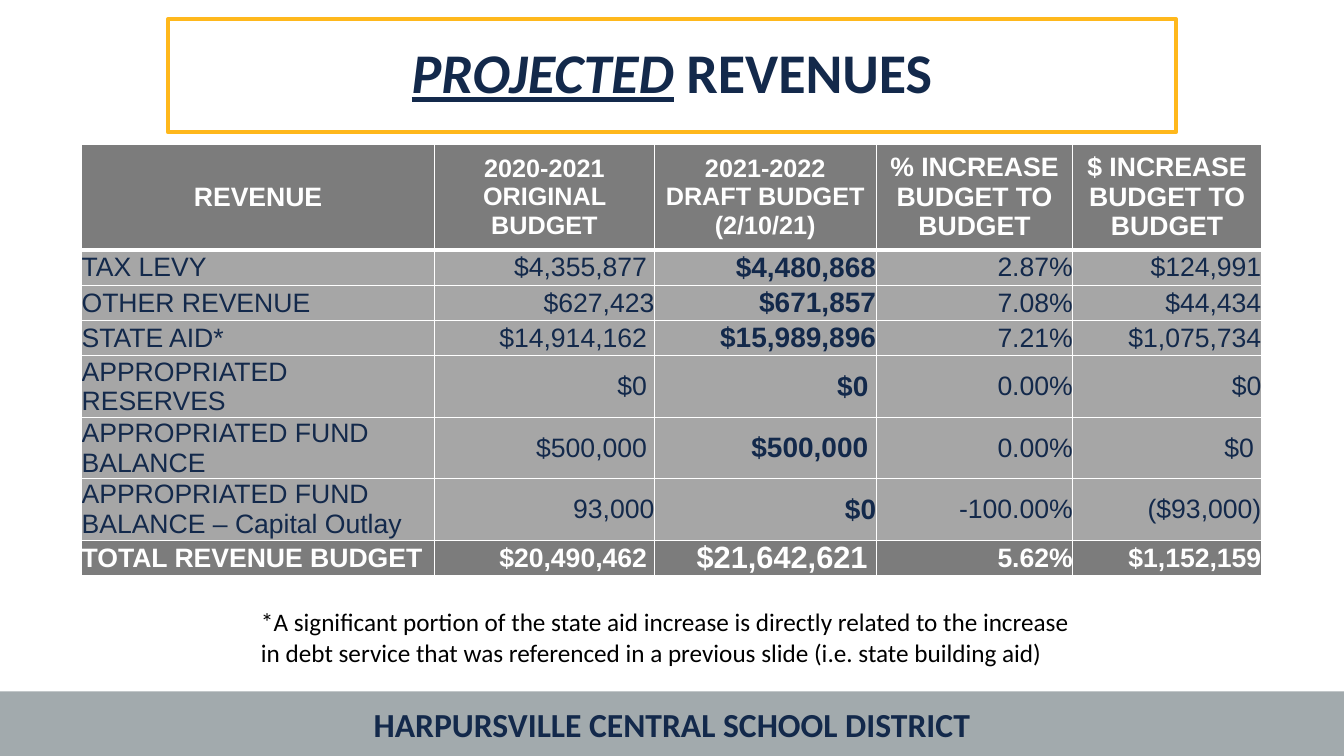
import lxml.etree
import pptx
import pptx.dml.color
import pptx.enum.shapes
import pptx.enum.text
import pptx.oxml.ns
import pptx.util

COLORS = {
    "navy": "13294B", "gold": "FFB81C", "band": "A2AAAD", "white": "FFFFFF",
    "dark": "7C7C7C", "light": "A6A6A6", "black": "000000",
}
WIDTH, HEIGHT = 13.33, 7.5

TITLE = [("PROJECTED", True), (" REVENUES", False)]
HEADER = [
    "REVENUE",
    "2020-2021\nORIGINAL BUDGET",
    "2021-2022\nDRAFT BUDGET (2/10/21)",
    "% INCREASE BUDGET TO BUDGET",
    "$ INCREASE BUDGET TO BUDGET",
]
REVENUES = [
    ("TAX LEVY", "$4,355,877 ", "$4,480,868", "2.87%", "$124,991"),
    ("OTHER REVENUE", "$627,423", "$671,857", "7.08%", "$44,434"),
    ("STATE AID*", "$14,914,162 ", "$15,989,896", "7.21%", "$1,075,734"),
    ("APPROPRIATED RESERVES", "$0 ", "$0 ", "0.00%", "$0"),
    ("APPROPRIATED FUND BALANCE", "$500,000 ", "$500,000 ", "0.00%", "$0 "),
    ("APPROPRIATED FUND BALANCE – Capital Outlay", "93,000", "$0", "-100.00%", "($93,000)"),
]
TOTAL = ("TOTAL REVENUE BUDGET", "$20,490,462 ", "$21,642,621 ", "5.62%", "$1,152,159")
NOTE = (
    "*A significant portion of the state aid increase is directly related to the increase "
    "in debt service that was referenced in a previous slide (i.e. state building aid)"
)
FOOTER = "HARPURSVILLE CENTRAL SCHOOL DISTRICT"

COLUMN_WIDTHS = [3.5, 2.18, 2.2, 1.95, 1.87]
HEADER_ROW, SINGLE_ROW, DOUBLE_ROW = 1.05, 0.35, 0.61
ROW_HEIGHTS = [HEADER_ROW] + [SINGLE_ROW] * 3 + [DOUBLE_ROW] * 3 + [SINGLE_ROW]
DRAFT_COLUMN = 2

ALIGN = pptx.enum.text.PP_ALIGN
MIDDLE = pptx.enum.text.MSO_ANCHOR.MIDDLE


def rgb(name):
    return pptx.dml.color.RGBColor.from_string(COLORS[name])


def box(left, top, width, height):
    return [pptx.util.Inches(value) for value in (left, top, width, height)]


def write(paragraph, text, size=19, font="Arial", color="navy", bold=False,
          emphasis=False, align=ALIGN.LEFT):
    paragraph.alignment = align
    run = paragraph.add_run()
    run.text = text
    run.font.size = pptx.util.Pt(size)
    run.font.name = font
    run.font.bold = bold
    run.font.italic = emphasis
    run.font.underline = emphasis
    run.font.color.rgb = rgb(color)


def set_borders(cell, top, bottom):
    properties = cell._tc.get_or_add_tcPr()
    for position, (side, points) in enumerate([("L", 1), ("R", 1), ("T", top), ("B", bottom)]):
        line = lxml.etree.Element(pptx.oxml.ns.qn(f"a:ln{side}"), w=str(pptx.util.Pt(points)))
        fill = lxml.etree.SubElement(line, pptx.oxml.ns.qn("a:solidFill"))
        lxml.etree.SubElement(fill, pptx.oxml.ns.qn("a:srgbClr"), val=COLORS["white"])
        properties.insert(position, line)


def cell_format(row, column):
    if row == 0:
        return dict(size=18 if column in (1, 2) else 19, color="white", bold=True,
                    align=ALIGN.CENTER)
    is_total = row == len(ROW_HEIGHTS) - 1
    is_draft = column == DRAFT_COLUMN
    size = (22 if is_total else 20) if is_draft else 19
    return dict(size=size, color="white" if is_total else "navy", bold=is_total or is_draft,
                align=ALIGN.RIGHT if column else ALIGN.LEFT)


def add_footer(slide):
    band_height = 0.64
    band = slide.shapes.add_shape(
        pptx.enum.shapes.MSO_SHAPE.RECTANGLE, *box(0, HEIGHT - band_height, WIDTH, band_height))
    band.shadow.inherit = False
    band.fill.solid()
    band.fill.fore_color.rgb = rgb("band")
    band.line.fill.background()
    band.text_frame.vertical_anchor = MIDDLE
    write(band.text_frame.paragraphs[0], FOOTER, size=24, font="Calibri", bold=True,
          align=ALIGN.CENTER)


def add_title(slide):
    title = slide.shapes.title
    title.left, title.top, title.width, title.height = box(WIDTH / 8, 0.19, WIDTH * 0.75, 1.12)
    title.line.color.rgb = rgb("gold")
    title.line.width = pptx.util.Pt(3)
    title.text_frame.vertical_anchor = MIDDLE
    paragraph = title.text_frame.paragraphs[0]
    paragraph.line_spacing = 0.9
    for text, emphasis in TITLE:
        write(paragraph, text, size=40, font="Calibri", bold=True, emphasis=emphasis,
              align=ALIGN.CENTER)


def add_revenue_table(slide):
    content = [HEADER, *REVENUES, TOTAL]
    table = slide.shapes.add_table(
        len(content), len(HEADER),
        *box(0.81, 1.43, sum(COLUMN_WIDTHS), sum(ROW_HEIGHTS))).table
    for column, width in zip(table.columns, COLUMN_WIDTHS):
        column.width = pptx.util.Inches(width)
    for row, height in zip(table.rows, ROW_HEIGHTS):
        row.height = pptx.util.Inches(height)
    for row, values in enumerate(content):
        for column, value in enumerate(values):
            cell = table.cell(row, column)
            cell.fill.solid()
            cell.fill.fore_color.rgb = rgb("dark" if row in (0, len(content) - 1) else "light")
            cell.vertical_anchor = MIDDLE
            if "\n" not in value:
                cell.margin_left = cell.margin_right = cell.margin_top = cell.margin_bottom = 0
            set_borders(cell, top=3 if row == 1 else 1, bottom=3 if row == 0 else 1)
            for index, line in enumerate(value.split("\n")):
                frame = cell.text_frame
                paragraph = frame.add_paragraph() if index else frame.paragraphs[0]
                write(paragraph, line, **cell_format(row, column))


def add_note(slide):
    frame = slide.shapes.add_textbox(*box(2.49, 5.97, 8.35, 0.71)).text_frame
    frame.word_wrap = True
    write(frame.paragraphs[0], NOTE, size=18, font="Calibri", color="black")


def main():
    presentation = pptx.Presentation()
    presentation.slide_width = pptx.util.Inches(WIDTH)
    presentation.slide_height = pptx.util.Inches(HEIGHT)
    slide = presentation.slides.add_slide(presentation.slide_layouts[5])
    add_footer(slide)
    add_title(slide)
    add_revenue_table(slide)
    add_note(slide)
    presentation.save("out.pptx")


if __name__ == "__main__":
    main()
